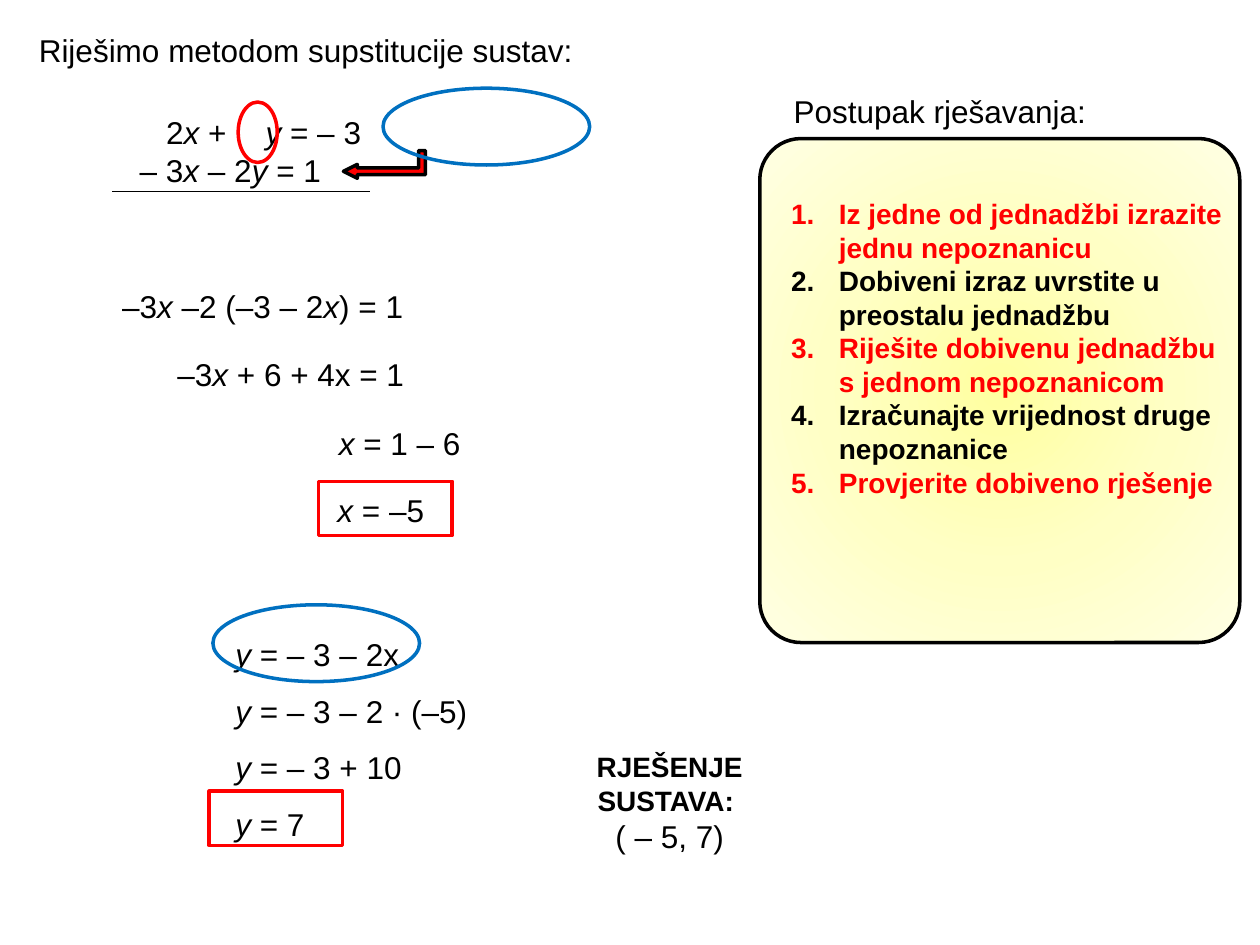
import pptx
import pptx.util
import pptx.dml.color
import pptx.enum.shapes
import pptx.enum.text
import pptx.oxml.ns
import lxml.etree
from dataclasses import dataclass

Inches = pptx.util.Inches
Pt = pptx.util.Pt
Kind = pptx.enum.shapes.MSO_SHAPE
Align = pptx.enum.text.PP_ALIGN
Fit = pptx.enum.text.MSO_AUTO_SIZE
qn = pptx.oxml.ns.qn


@dataclass(frozen=True)
class Theme:
    font: str = "Arial"
    body: int = 18
    small: int = 16
    black: str = "000000"
    red: str = "FF0000"
    blue: str = "0070C0"
    glow: tuple = ((0, "FFFFA0"), (50, "FFFFC5"), (100, "FFFFE3"))
    thick: float = 2
    thin: float = 0.75


def tint(code):
    return pptx.dml.color.RGBColor.from_string(code)


def add_sub(parent, tag, **attrs):
    node = lxml.etree.SubElement(parent, qn(tag))
    for key, value in attrs.items():
        node.set(key, str(value))
    return node


def write(par, text, theme, size=None, color=None, bold=False, align=None,
          space=None, left=None, first=None, count=False, tab=None):
    props = par._p.get_or_add_pPr()
    if left is not None:
        props.set("marL", str(Inches(left)))
        props.set("indent", str(Inches(first)))
    if count:
        add_sub(props, "a:buFont", typeface="+mj-lt")
        add_sub(props, "a:buAutoNum", type="arabicPeriod")
    if tab:
        add_sub(add_sub(props, "a:tabLst"), "a:tab", pos=Inches(tab), algn="l")
    if align is not None:
        par.alignment = align
    if space:
        par.line_spacing = space
    for i, part in enumerate(text.split("*")):
        if part:
            run = par.add_run()
            run.text = part
            font = run.font
            font.name = theme.font
            font.size = Pt(size or theme.body)
            font.bold = bold
            font.italic = i % 2 == 1
            font.color.rgb = tint(color or theme.black)


class Board:
    def __init__(self, slide, theme):
        self.slide = slide
        self.theme = theme

    def text(self, place, *lines, wrap=True, **style):
        frame = self.slide.shapes.add_textbox(*map(Inches, place)).text_frame
        frame.word_wrap = wrap
        frame.auto_size = Fit.SHAPE_TO_FIT_TEXT
        for i, line in enumerate(lines):
            words, extra = line if isinstance(line, tuple) else (line, {})
            par = frame.add_paragraph() if i else frame.paragraphs[0]
            write(par, words, self.theme, **{**style, **extra})

    def shape(self, kind, place, color, fill=None, tweaks=()):
        shape = self.slide.shapes.add_shape(kind, *map(Inches, place))
        shape.shadow.inherit = False
        shape.line.color.rgb = tint(color)
        shape.line.width = Pt(self.theme.thick)
        if fill:
            shape.fill.solid()
            shape.fill.fore_color.rgb = tint(fill)
        else:
            shape.fill.background()
        for i, value in enumerate(tweaks):
            shape.adjustments[i] = value
        return shape

    def panel(self, place):
        shape = self.shape(Kind.ROUNDED_RECTANGLE, place, self.theme.black,
                           tweaks=[0.086])
        shape.fill.gradient()
        grad = shape._element.spPr.find(qn("a:gradFill"))
        for child in list(grad):
            grad.remove(child)
        stops = add_sub(grad, "a:gsLst")
        for spot, color in self.theme.glow:
            stop = add_sub(stops, "a:gs", pos=spot * 1000)
            add_sub(stop, "a:srgbClr", val=color)
        path = add_sub(grad, "a:path", path="circle")
        add_sub(path, "a:fillToRect", l=50000, t=50000, r=50000, b=50000)

    def arrow(self, place):
        shape = self.shape(Kind.BENT_UP_ARROW, place, self.theme.black,
                           self.theme.red, [0.241, 0.25, 0.5])
        shape.rotation = 270
        shape._element.spPr.find(qn("a:xfrm")).set("flipH", "1")

    def rule(self, left, top, right):
        line = self.slide.shapes.add_connector(
            pptx.enum.shapes.MSO_CONNECTOR.STRAIGHT,
            *map(Inches, (left, top, right, top)))
        line.line.color.rgb = tint(self.theme.black)
        line.line.width = Pt(self.theme.thin)
        add_sub(line._element.spPr, "a:effectLst")


def main():
    deck = pptx.Presentation()
    deck.slide_width, deck.slide_height = Inches(10), Inches(7.5)
    theme = Theme()
    board = Board(deck.slides.add_slide(deck.slide_layouts[6]), theme)

    board.panel((6.03, 1.1, 3.81, 4))
    board.text((0.21, 0.2, 4.46, 0.4), "Riješimo metodom supstitucije sustav:")
    board.text((1.01, 0.85, 2.22, 0.71),
               ("2*x* +\t*y* = – 3", dict(left=0, first=0.21, tab=0.9)),
               "– 3*x* – 2*y* = 1")
    board.rule(0.89, 1.52, 2.94)

    for left, top, width, words in (
            (0.87, 2.23, 2.51, "–3*x* –2 (–3 – 2*x*) = 1"),
            (1.31, 2.77, 2.25, "–3*x* + 6 + 4x = 1"),
            (2.59, 3.32, 1.45, "*x* = 1 – 6"),
            (2.58, 3.85, 1.72, "*x* = –5")):
        board.text((left, top, width, 0.4), words)

    board.text((1.77, 4.84, 2.77, 1.92),
               "*y* = – 3 – 2x", "*y* = – 3 – 2 · (–5)",
               "*y* = – 3 + 10", "*y* = 7", space=1.5)

    steps = ("Iz jedne od jednadžbi izrazite jednu nepoznanicu",
             "Dobiveni izraz uvrstite u preostalu jednadžbu",
             "Riješite dobivenu jednadžbu s jednom nepoznanicom",
             "Izračunajte vrijednost druge nepoznanice",
             "Provjerite dobiveno rješenje")
    pair = (theme.red, theme.black)
    board.text((6.18, 1.51, 3.62, 2.52),
               *[(step, dict(color=pair[i % 2])) for i, step in enumerate(steps)],
               size=theme.small, bold=True, left=0.38, first=-0.38, count=True)
    board.text((4.23, 5.9, 2.17, 0.98),
               ("RJEŠENJE SUSTAVA: ", dict(size=theme.small, bold=True)),
               "( – 5, 7)", align=Align.CENTER)

    board.shape(Kind.OVAL, (1.89, 0.81, 0.31, 0.48), theme.red)
    board.arrow((2.94, 0.98, 0.22, 0.65))
    for left, top in ((2.53, 3.82), (1.66, 6.28)):
        board.shape(Kind.RECTANGLE, (left, top, 1.06, 0.43), theme.red)
    board.text((6.2, 0.68, 2.61, 0.4), "Postupak rješavanja:", wrap=False)
    for left, top in ((3.04, 0.7), (1.69, 4.8)):
        board.shape(Kind.OVAL, (left, top, 1.64, 0.61), theme.blue)

    deck.save("out.pptx")


if __name__ == "__main__":
    main()
